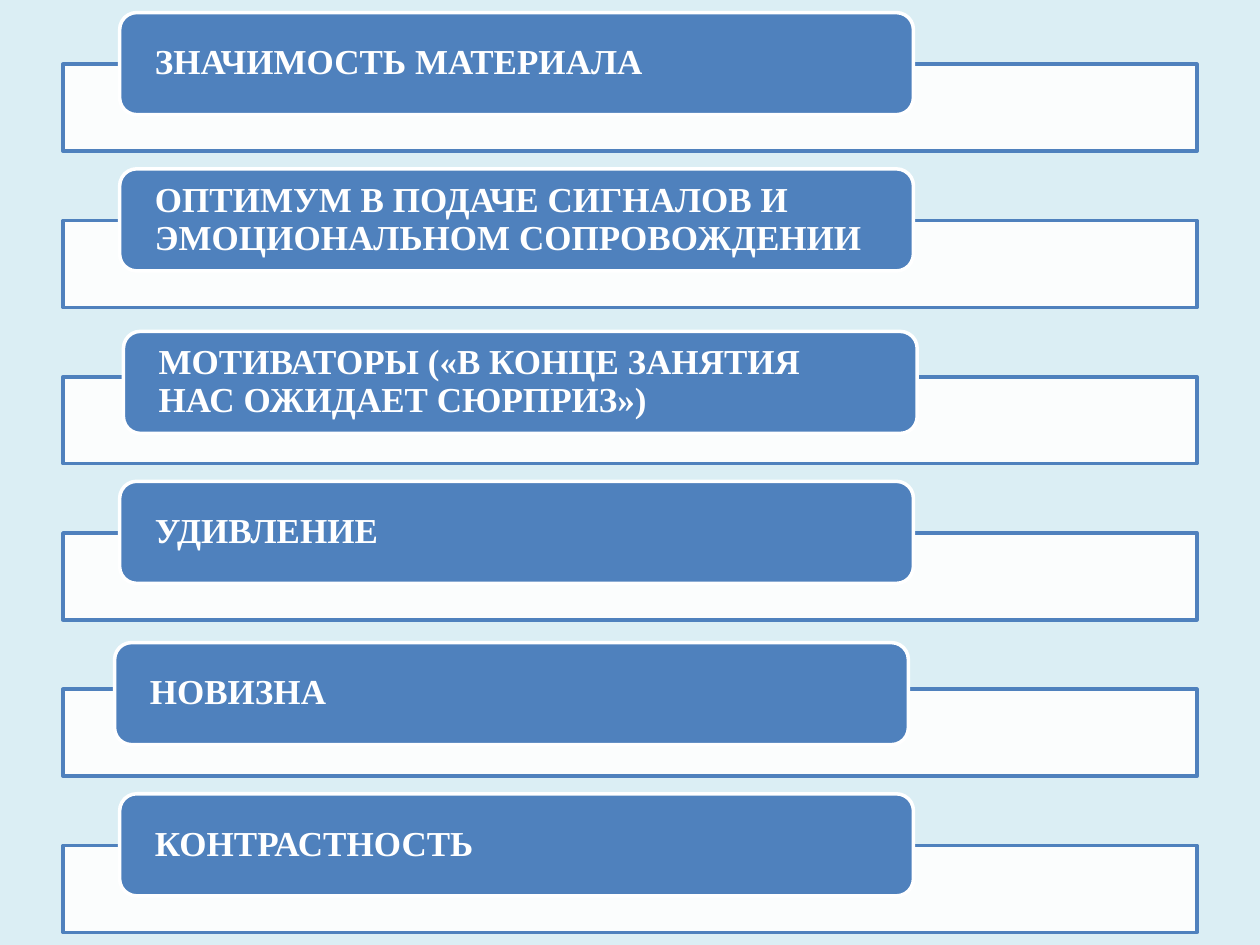
from lxml import etree
from pptx import Presentation
from pptx import util as u
from pptx.dml.color import RGBColor
from pptx.enum import shapes, text
from pptx.oxml.ns import qn

BACKGROUND = RGBColor(0xDB, 0xEE, 0xF4)
BLUE = RGBColor(0x4F, 0x81, 0xBD)
WHITE = RGBColor(0xFF, 0xFF, 0xFF)

# Row grid, in inches
FIRST_ROW, ROW_PITCH = 0.1, 1.24
LABEL_LEFT, LABEL_WIDTH, LABEL_HEIGHT = 0.95, 6.3, 0.81
BAR_LEFT, BAR_DROP, BAR_WIDTH, BAR_HEIGHT = 0.5, 0.41, 9, 0.69

# Wording, with each label's shift right and down from its grid place
FACTORS = [
    ("ЗНАЧИМОСТЬ МАТЕРИАЛА", 0, 0),
    ("ОПТИМУМ В ПОДАЧЕ СИГНАЛОВ И ЭМОЦИОНАЛЬНОМ СОПРОВОЖДЕНИИ", 0, 0),
    ("МОТИВАТОРЫ («В КОНЦЕ ЗАНЯТИЯ НАС ОЖИДАЕТ СЮРПРИЗ»)", 0.03, 0.05),
    ("УДИВЛЕНИЕ", 0, 0),
    ("НОВИЗНА", -0.04, 0.04),
    ("КОНТРАСТНОСТЬ", 0, 0),
]


def write_text(shape, wording, *, font="Times New Roman", size=20, bold=True,
               color=WHITE, inset=0.24):
    frame = shape.text_frame
    frame.word_wrap = True
    frame.vertical_anchor = text.MSO_ANCHOR.MIDDLE
    frame.margin_left = frame.margin_right = u.Inches(inset)
    frame.margin_top = frame.margin_bottom = 0
    paragraph = frame.paragraphs[0]
    paragraph.alignment = text.PP_ALIGN.LEFT
    paragraph.line_spacing = 0.9
    run = paragraph.add_run()
    run.text = wording
    run.font.name, run.font.size = font, u.Pt(size)
    run.font.bold = bold
    run.font.color.rgb = color


class FactorSlide:
    """Style and current slide of the factor list."""

    def __init__(self, presentation):
        self.slide = presentation.slides.add_slide(presentation.slide_layouts[6])
        fill = self.slide.background.fill
        fill.solid()
        fill.fore_color.rgb = BACKGROUND

    def box(self, kind, left, top, width, height, fill, line):
        shape = self.slide.shapes.add_shape(
            kind, *map(u.Inches, (left, top, width, height)))
        shape.shadow.inherit = False
        shape.fill.solid()
        shape.fill.fore_color.rgb = fill
        shape.line.color.rgb = line
        shape.line.width = u.Pt(2)
        return shape

    def bar(self, row):
        top = FIRST_ROW + row * ROW_PITCH + BAR_DROP
        shape = self.box(shapes.MSO_SHAPE.RECTANGLE, BAR_LEFT, top,
                         BAR_WIDTH, BAR_HEIGHT, WHITE, BLUE)
        # 90 % opaque fill
        color = shape.fill._xPr.find(qn("a:solidFill"))[0]
        etree.SubElement(color, qn("a:alpha"), val="90000")

    def label(self, row, wording, shift_right, shift_down):
        top = FIRST_ROW + row * ROW_PITCH + shift_down
        shape = self.box(shapes.MSO_SHAPE.ROUNDED_RECTANGLE,
                         LABEL_LEFT + shift_right, top,
                         LABEL_WIDTH, LABEL_HEIGHT, BLUE, WHITE)
        write_text(shape, wording)


def main():
    presentation = Presentation()
    presentation.slide_width, presentation.slide_height = u.Inches(10), u.Inches(7.5)
    factors = FactorSlide(presentation)
    # One bar with its overlapping label per row
    for row, (wording, shift_right, shift_down) in enumerate(FACTORS):
        factors.bar(row)
        factors.label(row, wording, shift_right, shift_down)
    presentation.save("out.pptx")


if __name__ == "__main__":
    main()
